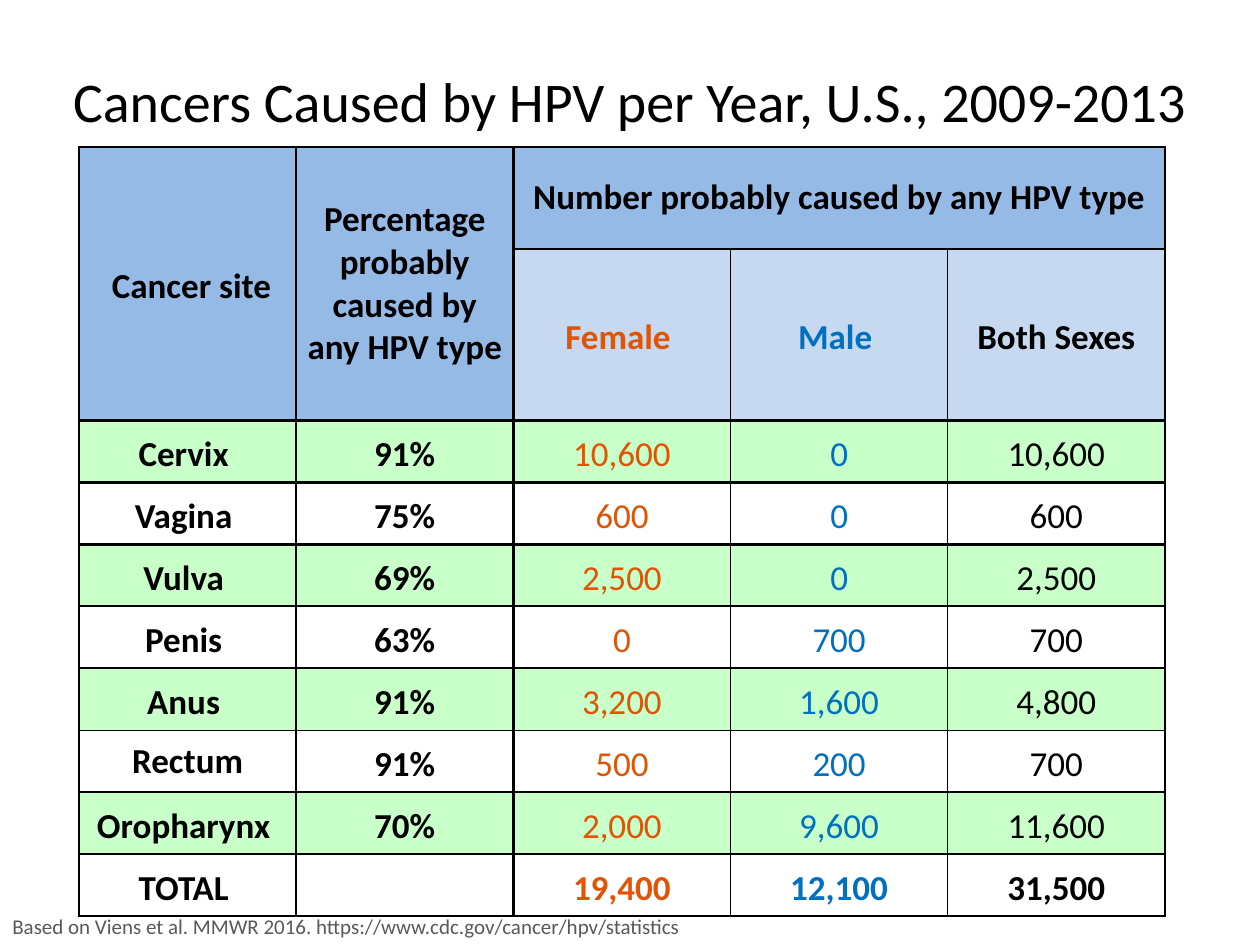
"""Builds a slide with a table of cancers caused by HPV per year."""
from lxml import etree
from pptx import Presentation
from pptx import util as u
from pptx.dml.color import RGBColor
from pptx.enum import text
from pptx.oxml.ns import qn

TITLE = "Cancers Caused by HPV per Year, U.S., 2009-2013"
SOURCE = "Based on Viens et al. MMWR 2016. https://www.cdc.gov/cancer/hpv/statistics"
ROWS = [
    ["\u00a0Cancer site".replace("\u00a0", chr(160)), "Percentage probably caused by any HPV type",
     "Number probably caused by any HPV type", "", ""],
    ["", "", "Female ", "Male ", "Both Sexes"],
    ["Cervix ", "91%", "10,600", "0", "10,600"],
    ["Vagina ", "75%", "600", "0", "600"],
    ["Vulva ", "69%", "2,500", "0", "2,500"],
    ["Penis ", "63%", "0", "700", "700"],
    ["Anus ", "91%", "3,200", "1,600", "4,800"],
    ["Rectum", "91%", "500", "200", "700"],
    ["Oropharynx ", "70%", "2,000", "9,600", "11,600"],
    ["TOTAL ", "", "19,400", "12,100", "31,500"],
]
MERGES = [((0, 0), (1, 0)), ((0, 1), (1, 1)), ((0, 2), (0, 4))]
SINGLE_SPACED = [(0, 1), (0, 2), (7, 0)]
COLORS = {"black": "000000", "female": "E05406", "male": "0070C0", "source": "595959",
          "header": "96BAE6", "subheader": "C6D9F1", "green": "C9FFC9", "white": "FFFFFF"}
COLUMN_COLORS = ["black", "black", "female", "male", "black"]
ROW_LINES = [1.5, 1, 1.5, 1.5, 1.5, 1.5, 1.5, 1, 1, 1, 1.5]
COLUMN_LINES = [1.5, 1.5, 1.5, 1, 1, 1]
TOTAL = len(ROWS) - 1
FONT = "Calibri"


def px(count):
    return u.Emu(round(count * 914400 / 126))


def rgb(name):
    return RGBColor.from_string(COLORS[name])


def write(frame, content, size, color, bold=False):
    frame.text = content
    para = frame.paragraphs[0]
    for span in para.runs:
        span.font.name, span.font.size, span.font.bold = FONT, u.Pt(size), bold
        span.font.color.rgb = rgb(color)
    return para


def set_borders(cell, widths):
    properties = cell._tc.get_or_add_tcPr()
    for index, (side, width) in enumerate(zip("LRTB", widths)):
        line = etree.Element(qn(f"a:ln{side}"), w=str(u.Pt(width)))
        fill = etree.SubElement(line, qn("a:solidFill"))
        etree.SubElement(fill, qn("a:srgbClr"), val=COLORS["black"])
        properties.insert(index, line)


def row_line(line, column):
    return 1.5 if line == 1 and column < 2 else ROW_LINES[line]


def column_line(line, row):
    return 1.5 if row == 0 else COLUMN_LINES[line]


def fill_name(row, column):
    if row < 2:
        return "header" if row == 0 or column < 2 else "subheader"
    return "white" if row % 2 else "green"


def format_cell(cell, row, column):
    color = "black" if row == 0 else COLUMN_COLORS[column]
    bold = row < 2 or row == TOTAL or column < 2
    para = write(cell.text_frame, ROWS[row][column], 20, color, bold)
    para.alignment = text.PP_ALIGN.CENTER
    if (row, column) not in SINGLE_SPACED:
        para.line_spacing = 1.15
    cell.vertical_anchor = text.MSO_ANCHOR.MIDDLE
    cell.margin_left = cell.margin_right = px(9)
    cell.margin_top = cell.margin_bottom = 0
    if row == TOTAL:
        cell.fill.background()
    else:
        cell.fill.solid()
        cell.fill.fore_color.rgb = rgb(fill_name(row, column))
    set_borders(cell, [column_line(column, row), column_line(column + 1, row),
                       row_line(row, column), row_line(row + 1, column)])


def add_cancer_table(page):
    table = page.shapes.add_table(len(ROWS), 5, px(79), px(147), px(1086), px(660)).table
    table.first_row = table.horz_banding = False
    for column in table.columns:
        column.width = px(1086 / 5)
    for index, row in enumerate(table.rows):
        row.height = px(62 if index else 102)
    for first, last in MERGES:
        table.cell(*first).merge(table.cell(*last))
    for row in range(len(ROWS)):
        for column in range(5):
            format_cell(table.cell(row, column), row, column)


def main():
    deck = Presentation()
    deck.slide_width, deck.slide_height = px(1260), px(945)
    page = deck.slides.add_slide(deck.slide_layouts[5])

    title = page.shapes.title
    title.left, title.top, title.width, title.height = px(0), px(21), px(1260), px(158)
    title.text_frame.auto_size = text.MSO_AUTO_SIZE.NONE
    title.text_frame.vertical_anchor = text.MSO_ANCHOR.MIDDLE
    write(title.text_frame, TITLE, 32, "black").alignment = text.PP_ALIGN.CENTER

    add_cancer_table(page)

    box = page.shapes.add_textbox(px(0), px(907), px(998), px(38))
    box.text_frame.word_wrap = True
    box.text_frame.auto_size = text.MSO_AUTO_SIZE.SHAPE_TO_FIT_TEXT
    write(box.text_frame, SOURCE, 12, "source")
    deck.save("out.pptx")


if __name__ == "__main__":
    main()
